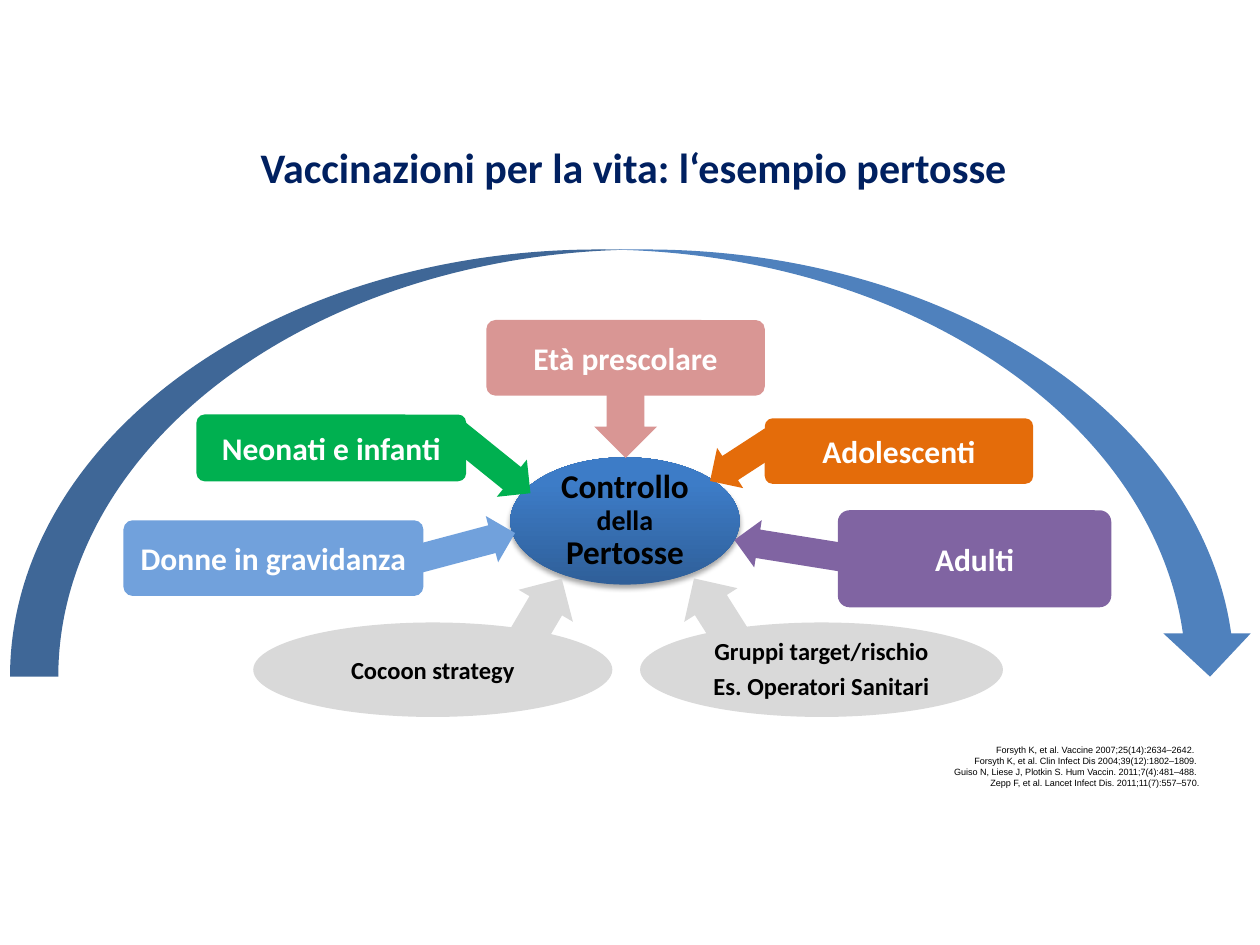
from lxml.etree import SubElement
from pptx import Presentation
from pptx.dml.color import RGBColor
from pptx.enum.shapes import MSO_SHAPE
from pptx.enum.text import MSO_ANCHOR, PP_ALIGN
from pptx.oxml.ns import qn
from pptx.util import Inches, Pt

THEME = {
    "font": "Calibri", "ref_font": "Arial",
    "title": "002060", "black": "000000", "white": "FFFFFF",
    "arc": "4F81BD", "hub_dark": "2F5F99", "hub_light": "3D7CC7",
    "green": "00B050", "pink": "D99694", "orange": "E46C0A",
    "violet": "8064A2", "sky": "71A1DC", "grey": "D9D9D9",
    "title_size": 24, "hub_size": 19, "hub_small": 16,
    "box_size": 18, "oval_size": 14, "ref_size": 5.2,
}

TITLE = "Vaccinazioni per la vita: l‘esempio pertosse"
HUB = [("Controllo ", "hub_size"), ("della ", "hub_small"), ("Pertosse", "hub_size")]
BOXES = [
    ("Neonati e infanti", "green", (1.56, 3.29, 2.14, 0.53), (3.49, 3.47, 0.81, 0.38), 218.9),
    ("Età prescolare", "pink", (3.86, 2.54, 2.21, 0.6), (4.64, 3.06, 0.65, 0.5), 270),
    ("Adolescenti", "orange", (6.07, 3.32, 2.13, 0.52), (5.58, 3.44, 0.69, 0.38), 327),
    ("Adulti", "violet", (6.65, 4.05, 2.17, 0.77), (5.82, 4.2, 1.32, 0.38), 9.1),
    ("Donne in gravidanza", "sky", (0.98, 4.13, 2.38, 0.6), (2.79, 4.21, 1.32, 0.38), 165.1),
]
OVALS = [
    ("Cocoon strategy", "grey", (2.01, 4.94, 2.85, 0.75), (3.78, 4.73, 0.9, 0.5), 120.5),
    ("Gruppi target/rischio\nEs. Operatori Sanitari", "grey", (5.08, 4.94, 2.88, 0.75),
     (5.31, 4.7, 0.85, 0.5), 57.7),
]
REFERENCES = [
    "Forsyth K, et al. Vaccine 2007;25(14):2634–2642.  ",
    "Forsyth K, et al. Clin Infect Dis 2004;39(12):1802–1809. ",
    "Guiso N, Liese J, Plotkin S. Hum Vaccin. 2011;7(4):481–488. ",
    "Zepp F, et al. Lancet Infect Dis. 2011;11(7):557–570.",
]


def color(name):
    return RGBColor.from_string(THEME[name])


def style(font, size, fill, bold=True, face="font"):
    font.name = THEME[face]
    font.size = Pt(THEME[size])
    font.bold = bold
    font.color.rgb = color(fill)


def add_shape(s, kind, at, fill=None, adjustments=(), rotation=0):
    sp = s.shapes.add_shape(kind, *map(Inches, at))
    sp.shadow.inherit = False
    sp.line.fill.background()
    if fill:
        sp.fill.solid()
        sp.fill.fore_color.rgb = color(fill)
    for i, value in enumerate(adjustments):
        sp.adjustments[i] = value
    sp.rotation = rotation
    return sp


def set_frame(tf, inset, anchor=MSO_ANCHOR.MIDDLE):
    tf.word_wrap = True
    tf.vertical_anchor = anchor
    tf.margin_left = tf.margin_right = tf.margin_top = tf.margin_bottom = Inches(inset)


def write(tf, text, size, fill, align=PP_ALIGN.CENTER, bold=True, face="font", gap=0, spacing=1.0):
    tf.text = text
    for p in tf.paragraphs:
        p.alignment = align
        p.line_spacing = spacing
        p.space_after = Pt(gap)
        for r in p.runs:
            style(r.font, size, fill, bold, face)


def add_hub(s):
    sp = add_shape(s, MSO_SHAPE.OVAL, (4.05, 3.63, 1.82, 1.01))
    sp.fill.gradient()
    sp.fill.gradient_angle = 90
    stops = sp.fill.gradient_stops
    for stop, name, position in zip(stops, ("hub_dark", "hub_light"), (0, 0.8)):
        stop.color.rgb = color(name)
        stop.position = position
    effects = sp.element.spPr.find(qn("a:effectLst"))
    shadow = SubElement(effects, qn("a:outerShdw"), blurRad=str(Pt(3.1)), dist=str(Pt(1.8)),
                        dir="5400000", rotWithShape="0")
    shade = SubElement(shadow, qn("a:srgbClr"), val=THEME["black"])
    SubElement(shade, qn("a:alpha"), val="35000")
    tf = sp.text_frame
    set_frame(tf, 0)
    p = tf.paragraphs[0]
    p.alignment = PP_ALIGN.CENTER
    p.line_spacing = 0.9
    for text, size in HUB:
        r = p.add_run()
        r.text = text
        style(r.font, size, "black")


def add_groups(s, groups, kind, adjustments, size, ink):
    for text, fill, at, arrow_at, rotation in groups:
        add_shape(s, MSO_SHAPE.LEFT_ARROW, arrow_at, fill, (0.6, 0.5), rotation)
        sp = add_shape(s, kind, at, fill, adjustments)
        set_frame(sp.text_frame, 0.06)
        several = "\n" in text
        write(sp.text_frame, text, size, ink,
              gap=5 if several else 0, spacing=0.9 if several else 1.0)


def main():
    prs = Presentation()
    prs.slide_width, prs.slide_height = Inches(10), Inches(7.5)
    s = prs.slides.add_slide(prs.slide_layouts[6])

    tf = s.shapes.add_textbox(*map(Inches, (0.69, 1.08, 8.68, 0.48))).text_frame
    set_frame(tf, 0.05)
    write(tf, TITLE, "title_size", "title")

    add_hub(s)
    add_groups(s, BOXES, MSO_SHAPE.ROUNDED_RECTANGLE, (0.12,), "box_size", "white")
    add_groups(s, OVALS, MSO_SHAPE.OVAL, (), "oval_size", "black")
    add_shape(s, MSO_SHAPE.CURVED_DOWN_ARROW, (0.08, 1.98, 9.87, 3.39), "arc",
              (0.113, 0.204, 0.101))

    tf = s.shapes.add_textbox(*map(Inches, (2.87, 5.86, 6.75, 0.57))).text_frame
    set_frame(tf, 0.1, MSO_ANCHOR.TOP)
    tf.margin_top = Inches(0.05)
    write(tf, "\n".join(REFERENCES), "ref_size", "black", PP_ALIGN.RIGHT, False, "ref_font")

    prs.save("out.pptx")


if __name__ == "__main__":
    main()
